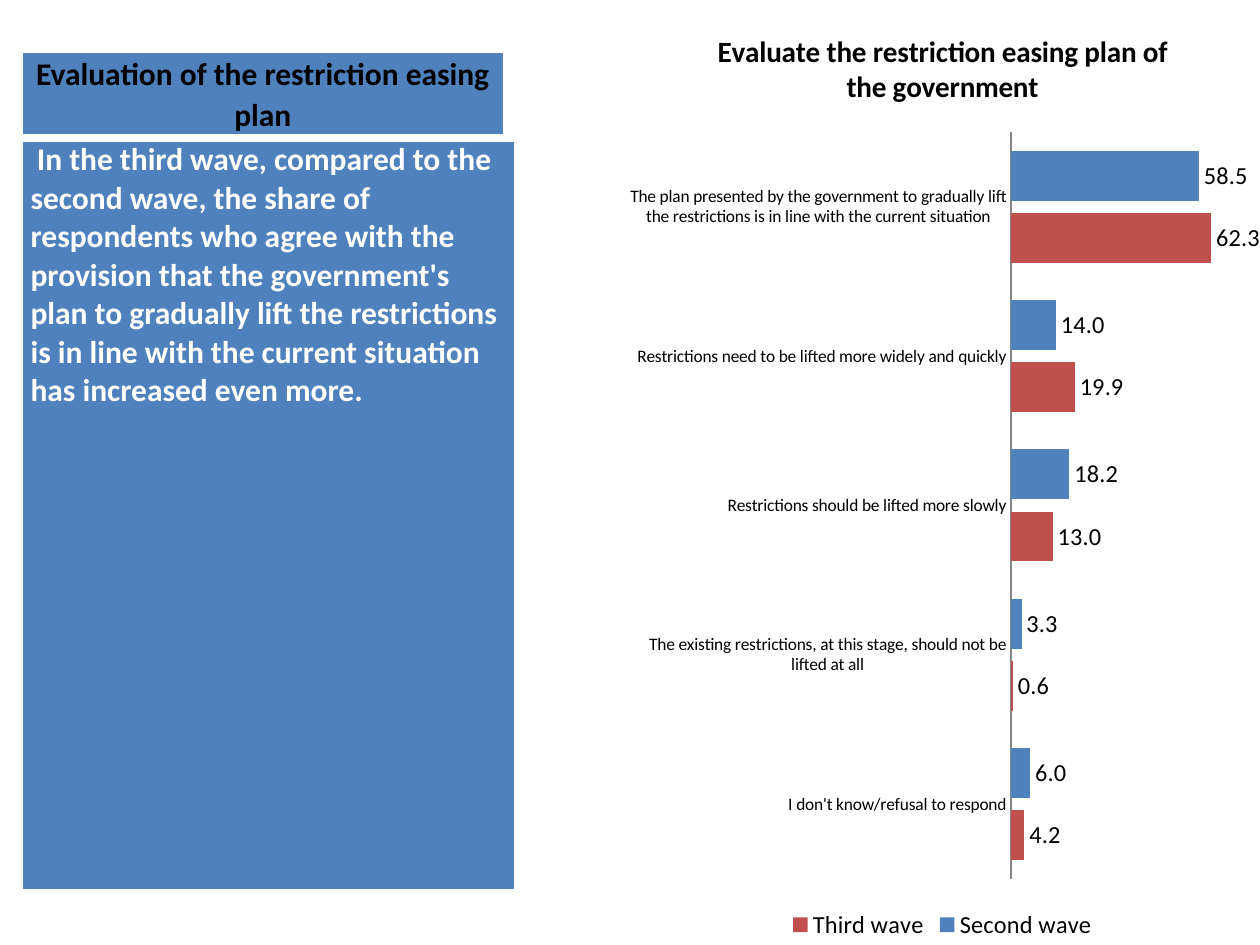
from lxml import etree
from pptx import Presentation
from pptx.chart.data import CategoryChartData
from pptx.dml.color import RGBColor
from pptx.enum.chart import (XL_CHART_TYPE, XL_LABEL_POSITION, XL_LEGEND_POSITION,
                             XL_TICK_LABEL_POSITION, XL_TICK_MARK)
from pptx.enum.text import PP_ALIGN
from pptx.oxml.ns import qn
from pptx.util import Pt

BLUE = RGBColor(0x4F, 0x81, 0xBD)
RED = RGBColor(0xC0, 0x50, 0x4D)
BLACK = RGBColor(0, 0, 0)
WHITE = RGBColor(0xFF, 0xFF, 0xFF)
GREY = RGBColor(0x86, 0x86, 0x86)
FONT = "Calibri"
NUMBER_FORMAT = "###0.0"

BORDER_WIDTHS = {"a:lnL": 1, "a:lnR": 1, "a:lnT": 1, "a:lnB": 3}
PLOT_AREA = {"x": 0.61, "y": 0.14, "w": 0.36, "h": 0.79}

CATEGORIES = [
    "The plan presented by the government to gradually lift the restrictions "
    "is in line with the current situation",
    "Restrictions need to be lifted more widely and quickly",
    "Restrictions should be lifted more slowly",
    "The existing restrictions, at this stage, should not be lifted at all",
    "I don't know/refusal to respond",
]
SERIES = [
    ("Second wave", (58.5, 14.0, 18.2, 3.3, 6.0), BLUE),
    ("Third wave", (62.3, 19.9, 13.0, 0.6, 4.2), RED),
]
FINDING = (
    "In the third wave, compared to the second wave, the share of respondents "
    "who agree with the provision that the government's plan to gradually lift "
    "the restrictions is in line with the current situation has increased even more."
)


def format_font(font, color, **values):
    font.color.rgb = color
    for name, value in {"name": FONT, **values}.items():
        setattr(font, name, value)


def add_borders(cell):
    properties = cell._tc.get_or_add_tcPr()
    for position, (tag, width) in enumerate(BORDER_WIDTHS.items()):
        line = etree.Element(qn(tag), w=str(Pt(width)))
        fill = etree.SubElement(line, qn("a:solidFill"))
        etree.SubElement(fill, qn("a:srgbClr"), val=str(WHITE))
        properties.insert(position, line)


def add_panel(page, left, top, width, height, spans, color, **paragraph_format):
    """Add a one-cell table; spans holds (text, size) pairs."""
    table = page.shapes.add_table(1, 1, Pt(left), Pt(top), Pt(width), Pt(height)).table
    cell = table.cell(0, 0)
    cell.fill.solid()
    cell.fill.fore_color.rgb = BLUE
    margins = {"margin_left": 5, "margin_right": 5, "margin_top": 0, "margin_bottom": 0}
    for name, value in margins.items():
        setattr(cell, name, Pt(value))
    add_borders(cell)
    para = cell.text_frame.paragraphs[0]
    for name, value in paragraph_format.items():
        setattr(para, name, value)
    for text, size in spans:
        span = para.add_run()
        span.text = text
        format_font(span.font, color, size=Pt(size), bold=True)


def set_plot_area(chart):
    """Fix the inner plot area as fractions of the chart."""
    plot_area = chart._chartSpace.chart.plotArea
    for old in plot_area.findall(qn("c:layout")):
        plot_area.remove(old)
    layout = etree.Element(qn("c:layout"))
    manual = etree.SubElement(layout, qn("c:manualLayout"))
    etree.SubElement(manual, qn("c:layoutTarget"), val="inner")
    for side in "xy":
        etree.SubElement(manual, qn(f"c:{side}Mode"), val="edge")
    for side, fraction in PLOT_AREA.items():
        etree.SubElement(manual, qn(f"c:{side}"), val=str(fraction))
    plot_area.insert(0, layout)


def format_axes(chart):
    categories, values = chart.category_axis, chart.value_axis
    for axis in (categories, values):
        axis.major_tick_mark = axis.minor_tick_mark = XL_TICK_MARK.NONE
        axis.has_major_gridlines = False
    categories.reverse_order = True
    categories.format.line.color.rgb = GREY
    format_font(categories.tick_labels.font, BLACK, size=Pt(10))
    values.minimum_scale, values.maximum_scale = 0, 70
    values.tick_label_position = XL_TICK_LABEL_POSITION.NONE
    values.format.line.fill.background()


def format_bars(plot):
    plot.gap_width = 75
    plot.overlap = -25
    plot.vary_by_categories = False
    for series, (_, _, color) in zip(plot.series, SERIES):
        series.format.fill.solid()
        series.format.fill.fore_color.rgb = color
        labels = series.data_labels
        label_format = {"show_value": True, "number_format": NUMBER_FORMAT,
                        "number_format_is_linked": False,
                        "position": XL_LABEL_POSITION.OUTSIDE_END}
        for name, value in label_format.items():
            setattr(labels, name, value)
        format_font(labels.font, BLACK, size=Pt(14))


def add_wave_chart(page, left, top, width, height):
    data = CategoryChartData(number_format=NUMBER_FORMAT)
    data.categories = CATEGORIES
    for name, values, _ in SERIES:
        data.add_series(name, values)
    chart = page.shapes.add_chart(XL_CHART_TYPE.BAR_CLUSTERED, Pt(left), Pt(top),
                                  Pt(width), Pt(height), data).chart
    format_font(chart.font, BLACK, size=Pt(14))
    chart.has_title = True
    title = chart.chart_title
    title.include_in_layout = False
    title.text_frame.text = "Evaluate the restriction easing plan of the government"
    format_font(title.text_frame.paragraphs[0].runs[0].font, BLACK, size=Pt(16.8), bold=True)
    chart.has_legend = True
    chart.legend.position = XL_LEGEND_POSITION.BOTTOM
    chart.legend.include_in_layout = False
    format_axes(chart)
    format_bars(chart.plots[0])
    set_plot_area(chart)


def main():
    deck = Presentation()
    deck.slide_width, deck.slide_height = Pt(720), Pt(540)
    page = deck.slides.add_slide(deck.slide_layouts[6])
    add_wave_chart(page, 360, 0, 360, 540)
    add_panel(page, 12.5, 30, 275.5, 48, [("Evaluation of the restriction easing plan", 18)],
              BLACK, alignment=PP_ALIGN.CENTER, line_spacing=1.07)
    add_panel(page, 12.5, 80.5, 281.5, 429, [(" ", 16), (FINDING, 18)], WHITE)
    deck.save("out.pptx")


if __name__ == "__main__":
    main()
